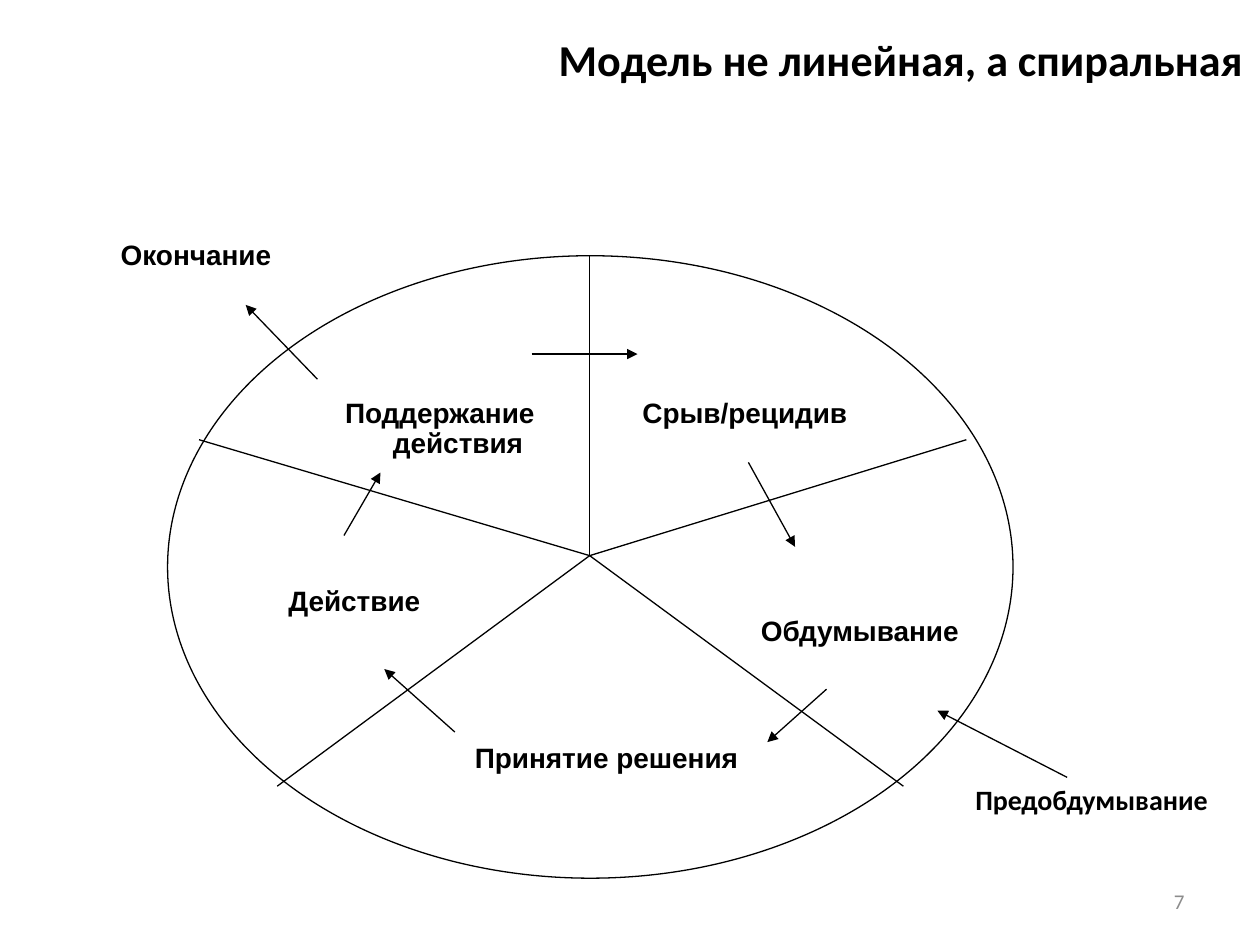
from lxml import etree
from pptx import Presentation
from pptx.dml.color import RGBColor
from pptx.enum.shapes import MSO_CONNECTOR, MSO_SHAPE
from pptx.enum.text import MSO_ANCHOR, MSO_AUTO_SIZE, PP_ALIGN
from pptx.oxml.ns import qn
from pptx.util import Inches, Pt

STRAIGHT = MSO_CONNECTOR.STRAIGHT
ELLIPSE = MSO_SHAPE.OVAL
MIDDLE, TOP = MSO_ANCHOR.MIDDLE, MSO_ANCHOR.TOP
LEFT, CENTER, RIGHT = PP_ALIGN.LEFT, PP_ALIGN.CENTER, PP_ALIGN.RIGHT
NO_AUTOFIT = MSO_AUTO_SIZE.NONE

BLACK, GRAY = "000000", "8C8C8C"

HUB = (4.68, 4.41)
WHEEL_BOX = (1.33, 2.03, 6.71, 4.94)
SPOKE_ENDS = [(4.68, 2.03), (7.17, 6.24), (2.2, 6.24), (1.58, 3.49), (7.67, 3.49)]

STAGES = [
    ("Обдумывание", (5.94, 4.85, 2.48, 0.39)),
    ("Принятие решения", (3.67, 5.86, 2.48, 0.39)),
    ("Действие", (2.19, 4.61, 1.69, 0.39)),
    ("Срыв/рецидив", (5, 3.12, 2.48, 0.39)),
    ("Поддержание действия", (2.64, 3.12, 2.2, 0.63)),
    ("Окончание", (0.86, 1.87, 1.53, 0.39)),
]

TRANSITIONS = [
    ((8.47, 6.17), (7.44, 5.64)),
    ((2.52, 3.01), (1.95, 2.42)),
    ((6.56, 5.47), (6.09, 5.89)),
    ((3.61, 5.81), (3.05, 5.31)),
    ((2.73, 4.25), (3.02, 3.75)),
    ((4.22, 2.81), (5.06, 2.81)),
    ((5.94, 3.67), (6.31, 4.34)),
]


def color(hex_value):
    return RGBColor.from_string(hex_value)


def set_attributes(target, values):
    for name, value in values.items():
        setattr(target, name, value)


class SlideBuilder:
    line_width = Pt(0.75)

    def __init__(self, slide):
        self.slide = slide

    def place(self, shape, box):
        names = ("left", "top", "width", "height")
        set_attributes(shape, dict(zip(names, map(Inches, box))))

    def set_text(self, shape, text, size, font="Calibri", bold=True,
                 fill=BLACK, align=LEFT, anchor=TOP):
        frame = shape.text_frame
        set_attributes(frame, {"word_wrap": True, "auto_size": NO_AUTOFIT,
                               "vertical_anchor": anchor})
        paragraph = frame.paragraphs[0]
        paragraph.alignment = align
        run = paragraph.add_run()
        run.text = text
        set_attributes(run.font, {"name": font, "size": Pt(size), "bold": bold})
        run.font.color.rgb = color(fill)
        return paragraph

    def hang(self, paragraph, margin, indent):
        """Give the paragraph a hanging indent without a bullet."""
        set_attributes(paragraph, {"line_spacing": 0.9, "space_before": Pt(3.2)})
        properties = paragraph._p.get_or_add_pPr()
        properties.set("marL", str(Inches(margin)))
        properties.set("indent", str(Inches(indent)))
        etree.SubElement(properties, qn("a:buNone"))

    def title(self, text, box):
        shape = self.slide.shapes.title
        self.place(shape, box)
        self.set_text(shape, text, 25.2, align=CENTER, anchor=MIDDLE)

    def body(self, text, box):
        shape = self.slide.placeholders[1]
        self.place(shape, box)
        self.hang(self.set_text(shape, text, 16), 0.4, -0.28)

    def text_box(self, text, box, size, **style):
        shape = self.slide.shapes.add_textbox(*map(Inches, box))
        return self.set_text(shape, text, size, **style)

    def stage(self, text, box):
        self.hang(self.text_box(text, box, 16, font="Arial"), 0.38, -0.38)

    def line(self, shapes, start, end, arrow=False):
        connector = shapes.add_connector(STRAIGHT, *map(Inches, start + end))
        connector.line.width = self.line_width
        connector.line.color.rgb = color(BLACK)
        properties = connector._element.spPr
        if arrow:
            etree.SubElement(properties.find(qn("a:ln")), qn("a:tailEnd"),
                             type="triangle")
        etree.SubElement(properties, qn("a:effectLst"))

    def arrow(self, start, end):
        self.line(self.slide.shapes, start, end, arrow=True)

    def wheel(self, box, hub, spoke_ends):
        shapes = self.slide.shapes.add_group_shape().shapes
        rim = shapes.add_shape(ELLIPSE, *map(Inches, box))
        rim.shadow.inherit = False
        rim.fill.background()
        rim.line.width = self.line_width
        rim.line.color.rgb = color(BLACK)
        for end in spoke_ends:
            self.line(shapes, hub, end)


def main():
    presentation = Presentation()
    presentation.slide_width = Inches(10)
    presentation.slide_height = Inches(7.5)
    slide = presentation.slides.add_slide(presentation.slide_layouts[1])
    builder = SlideBuilder(slide)

    builder.title("Модель не линейная, а спиральная", (4.3, 0, 5.7, 0.94))
    builder.text_box("7", (7.17, 6.95, 2.33, 0.4), 12, bold=False,
                     fill=GRAY, align=RIGHT, anchor=MIDDLE)
    builder.body("Предобдумывание", (7.52, 6.19, 2.48, 0.39))
    builder.wheel(WHEEL_BOX, HUB, SPOKE_ENDS)
    for text, box in STAGES:
        builder.stage(text, box)
    for start, end in TRANSITIONS:
        builder.arrow(start, end)

    presentation.save("out.pptx")


if __name__ == "__main__":
    main()
